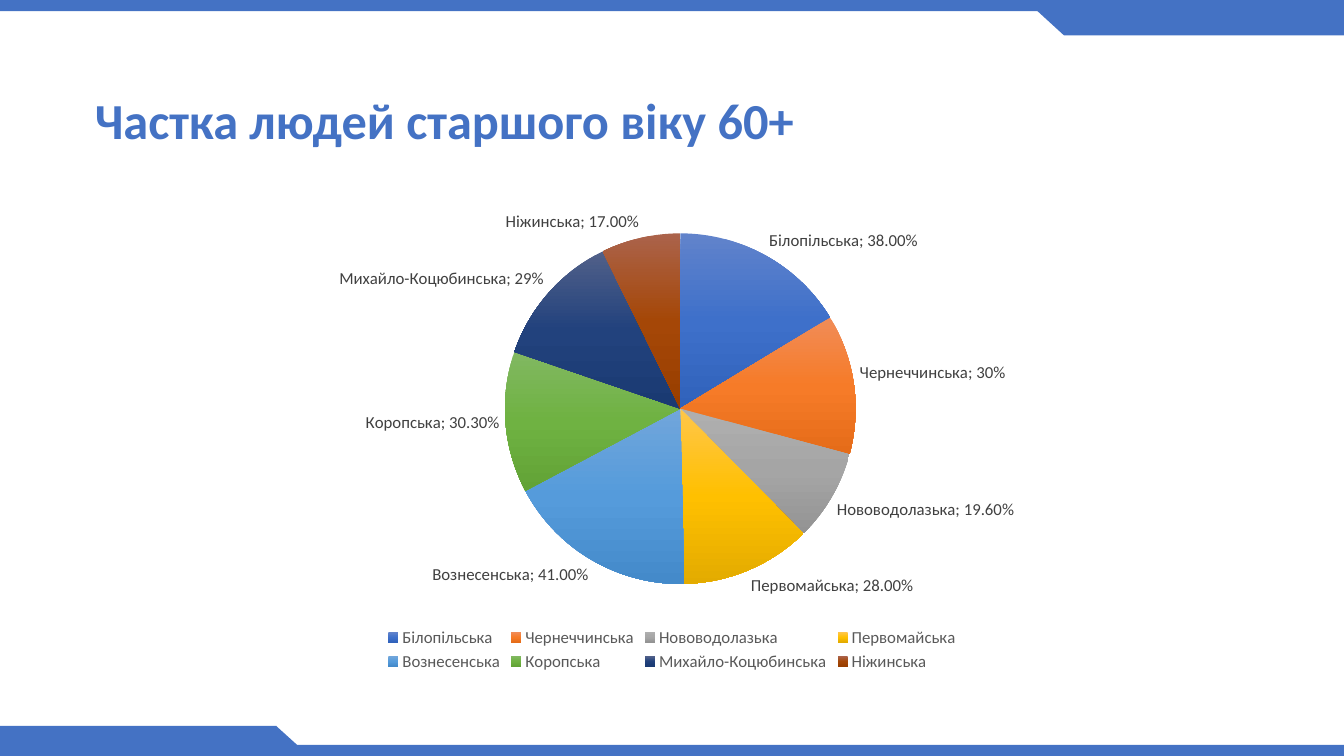
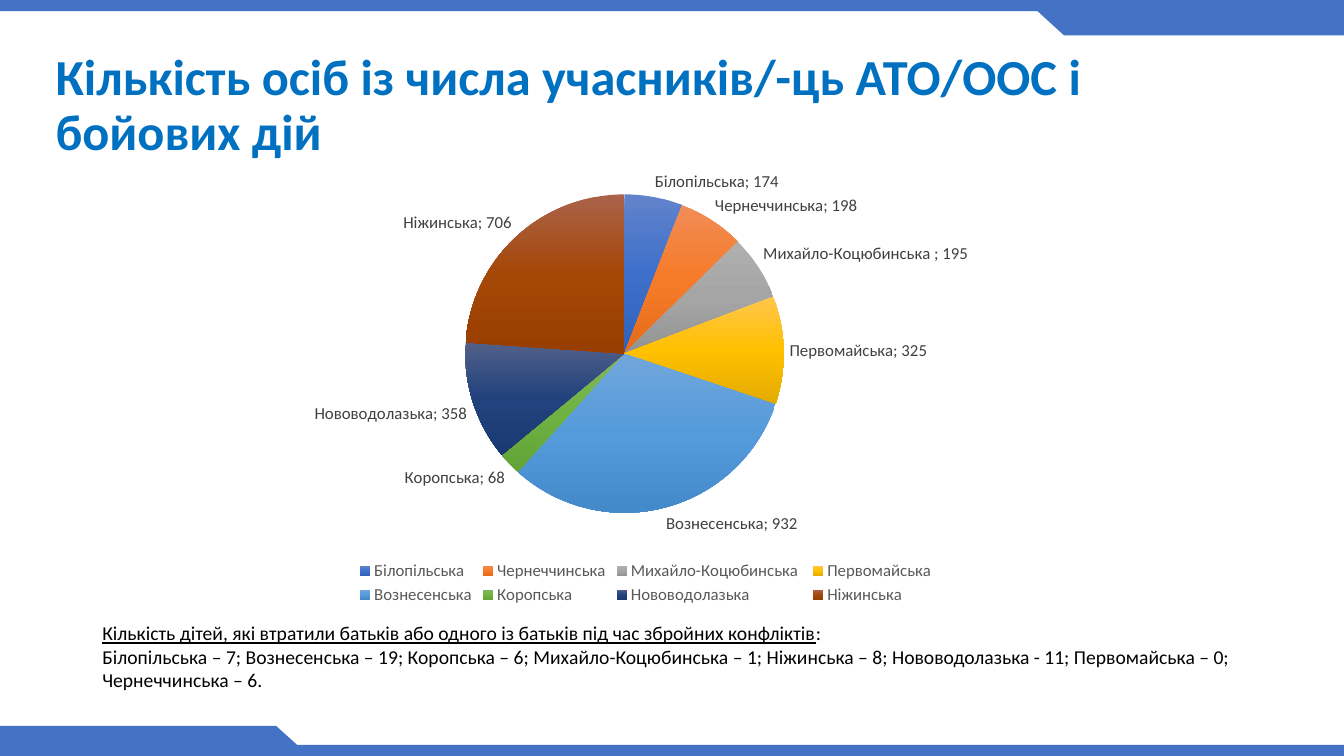
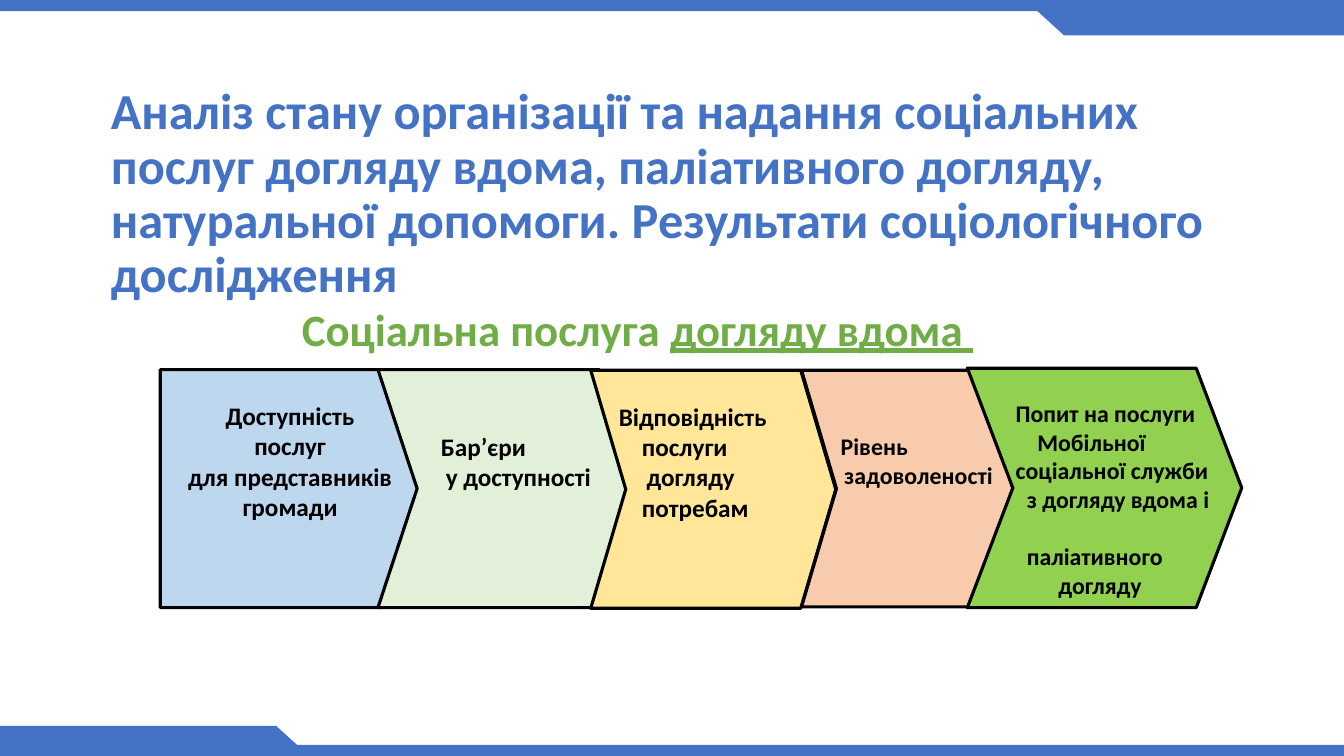
from copy import deepcopy

from pptx import Presentation
from pptx.chart.data import CategoryChartData
from pptx.dml.color import RGBColor
from pptx.enum.chart import XL_CHART_TYPE, XL_LABEL_POSITION, XL_LEGEND_POSITION
from pptx.enum.shapes import MSO_SHAPE
from pptx.enum.text import MSO_ANCHOR, MSO_AUTO_SIZE, PP_ALIGN
from pptx.oxml import parse_xml
from pptx.oxml.ns import nsdecls, qn
from pptx.util import Pt

FONT = "Calibri"
BLUE = RGBColor(0x44, 0x72, 0xC4)
DEEP_BLUE = RGBColor(0x00, 0x70, 0xC0)
GREEN = RGBColor(0x70, 0xAD, 0x47)
BLACK = RGBColor(0x00, 0x00, 0x00)
LABEL_GRAY = RGBColor(0x40, 0x40, 0x40)
LEGEND_GRAY = RGBColor(0x59, 0x59, 0x59)
STEP_BLUE = RGBColor(0xBD, 0xD7, 0xEE)
STEP_MINT = RGBColor(0xE2, 0xF0, 0xD9)
STEP_YELLOW = RGBColor(0xFF, 0xE6, 0x99)
STEP_PEACH = RGBColor(0xF8, 0xCB, 0xAD)
STEP_GREEN = RGBColor(0x92, 0xD0, 0x50)
SLICE_GRADIENTS = [
    [RGBColor.from_string(code) for code in codes.split()]
    for codes in (
        "6183CB 3E70CA 3062BB",
        "F18C57 F67B28 E56C19",
        "AFAFAF A5A5A5 939393",
        "FFC64B FFC000 E3AB00",
        "71A6DB 559BDB 448ACA",
        "81B861 6FB242 62A336",
        "516089 22427D 1A3A72",
        "AB634B A54707 983E00",
    )
]


def add_title(slide, text, color, left, top, width, height):
    title = slide.shapes.title
    title.left, title.top, title.width, title.height = Pt(left), Pt(top), Pt(width), Pt(height)
    frame = title.text_frame
    frame.auto_size = MSO_AUTO_SIZE.NONE
    frame.word_wrap = True
    frame.vertical_anchor = MSO_ANCHOR.MIDDLE
    paragraph = frame.paragraphs[0]
    paragraph.alignment = PP_ALIGN.LEFT
    paragraph.line_spacing = 0.9
    run = paragraph.add_run()
    run.text = text
    run.font.name, run.font.size, run.font.bold = FONT, Pt(36), True
    run.font.color.rgb = color


def add_pie(slide, left, top, width, height, values, number_format, fixed_labels):
    """Draw a pie of communities; fixed_labels maps a slice index to its own label text."""
    data = CategoryChartData(number_format=number_format)
    data.categories = values.keys()
    data.add_series("Series 1", values.values())
    chart = slide.shapes.add_chart(
        XL_CHART_TYPE.PIE, Pt(left), Pt(top), Pt(width), Pt(height), data
    ).chart
    chart.has_title = False
    chart.font.name, chart.font.size = FONT, Pt(10)
    chart.font.color.rgb = BLACK
    chart.has_legend = True
    chart.legend.position = XL_LEGEND_POSITION.BOTTOM
    chart.legend.include_in_layout = False
    chart.plots[0].vary_by_categories = True
    series = chart.plots[0].series[0]

    labels = series.data_labels
    labels.show_value = labels.show_category_name = True
    labels.show_percentage = labels.show_series_name = labels.show_legend_key = False
    labels.position = XL_LABEL_POSITION.OUTSIDE_END
    labels.number_format, labels.number_format_is_linked = number_format, False
    for font, color in ((chart.legend.font, LEGEND_GRAY), (labels.font, LABEL_GRAY)):
        font.name, font.size = FONT, Pt(12)
        font.color.rgb = color
    for index, text in fixed_labels.items():
        label = series.points[index].data_label
        run = label.text_frame.paragraphs[0].add_run()
        run.text = text
        run.font.name, run.font.size = FONT, Pt(12)
        run.font.color.rgb = LABEL_GRAY
        label.position = XL_LABEL_POSITION.OUTSIDE_END
    for flag in list(chart.element.iter(qn("c:showBubbleSize"))):
        flag.addnext(parse_xml(f'<c:separator {nsdecls("c")}>; </c:separator>'))

    for index, colors in enumerate(SLICE_GRADIENTS):
        fill = series.points[index].format.fill
        fill.gradient()
        fill.gradient_angle = 270
        stop_list = list(chart.element.iter(qn("a:gsLst")))[index]
        stop_list.append(deepcopy(stop_list[0]))
        for stop, color, position in zip(fill.gradient_stops, colors, (0, 0.5, 1)):
            stop.color.rgb = color
            stop.position = position


presentation = Presentation()
presentation.slide_width, presentation.slide_height = Pt(960), Pt(540)
content_layout, title_layout = presentation.slide_layouts[1], presentation.slide_layouts[5]

# Slide 1: share of older people
slide = presentation.slides.add_slide(title_layout)

# Bands are drawn once and moved to the master, behind its placeholders
master_tree = presentation.slide_master.element.cSld.spTree
bands = [
    (MSO_SHAPE.RECTANGLE, 0, 0, 960, 8, 0),
    (MSO_SHAPE.RECTANGLE, 0, 532, 960, 8, 0),
    (MSO_SHAPE.RECTANGLE, 760, 3.5, 200, 21.75, 0),
    (MSO_SHAPE.FLOWCHART_MERGE, 736, 3.25, 47.5, 21.75, 0),
    (MSO_SHAPE.RECTANGLE, 0, 518.5, 197.5, 21.5, 0),
    (MSO_SHAPE.FLOWCHART_MERGE, 173.5, 518.5, 47.5, 21.5, 180),
]
for index, (kind, left, top, width, height, rotation) in enumerate(bands):
    band = slide.shapes.add_shape(kind, Pt(left), Pt(top), Pt(width), Pt(height))
    band.rotation = rotation
    band.shadow.inherit = False
    band.fill.solid()
    band.fill.fore_color.rgb = BLUE
    band.line.fill.background()
    band.element.nvSpPr.cNvPr.set("id", str(20 + index))
    master_tree.insert(2 + index, band.element)

add_title(slide, "Частка людей старшого віку 60+", BLUE, 60.5, 30, 828, 116)
older_share = {
    "Білопільська": 0.38,
    "Чернеччинська": 0.3,
    "Нововодолазька": 0.196,
    "Первомайська": 0.28,
    "Вознесенська": 0.41,
    "Коропська": 0.303,
    "Михайло-Коцюбинська": 0.29,
    "Ніжинська": 0.17,
}
add_pie(slide, 66, 140, 828, 342.5, older_share, "0.00%",
        {1: "Чернеччинська; 30%", 6: "Михайло-Коцюбинська; 29%"})

# Slide 2: veterans
slide = presentation.slides.add_slide(title_layout)
add_title(slide, "Кількість осіб із числа учасників/-ць АТО/ООС і бойових дій",
          DEEP_BLUE, 32.5, 29.5, 867.5, 93.5)
veterans = {
    "Білопільська": 174,
    "Чернеччинська": 198,
    "Михайло-Коцюбинська ": 195,
    "Первомайська": 325,
    "Вознесенська": 932,
    "Коропська": 68,
    "Нововодолазька": 358,
    "Ніжинська": 706,
}
add_pie(slide, 66, 111.5, 790.5, 323.5, veterans, "General", {})

note_frame = slide.shapes.add_textbox(Pt(66), Pt(440), Pt(867.5), Pt(58)).text_frame
note_frame.word_wrap = True
note_lines = [
    [("Кількість дітей, які втратили батьків або одного із батьків "
      "під час збройних конфліктів", True), (":", False)],
    [("Білопільська – 7; Вознесенська – 19; Коропська – 6; Михайло-Коцюбинська – 1; "
      "Ніжинська – 8; Нововодолазька - 11; Первомайська – 0; Чернеччинська – 6.", False)],
]
for index, line in enumerate(note_lines):
    paragraph = note_frame.add_paragraph() if index else note_frame.paragraphs[0]
    for text, underlined in line:
        run = paragraph.add_run()
        run.text = text
        run.font.name, run.font.size, run.font.underline = FONT, Pt(14), underlined
        run.font.color.rgb = BLACK

# Slide 3: survey topics
slide = presentation.slides.add_slide(content_layout)
add_title(slide, "Аналіз стану організації та надання соціальних послуг догляду вдома, "
          "паліативного догляду, натуральної допомоги. Результати соціологічного дослідження",
          BLUE, 72, 77, 828, 124.5)

body = slide.placeholders[1]
body.left, body.top, body.width, body.height = Pt(208.5), Pt(216), Pt(620), Pt(44)
body.text_frame.auto_size = MSO_AUTO_SIZE.NONE
paragraph = body.text_frame.paragraphs[0]
properties = paragraph._p.get_or_add_pPr()
properties.set("marL", "0")
properties.set("indent", "0")
properties.append(parse_xml(f'<a:buNone {nsdecls("a")}/>'))
paragraph.line_spacing = 0.9
paragraph.space_before = Pt(0)
for text, underlined in (("Соціальна послуга ", False), ("догляду вдома ", True)):
    run = paragraph.add_run()
    run.text = text
    run.font.name, run.font.size = FONT, Pt(32)
    run.font.bold, run.font.underline = True, underlined
    run.font.color.rgb = GREEN

# Each step: left, top, width, height, tip, notch, fill, text top, size, alignment,
# lines as (indent, space before, text)
steps = [
    (114.5, 264, 185.5, 170, 28, 0, STEP_BLUE, 22, 18, PP_ALIGN.CENTER,
     [(0, 0, "Доступність"), (0, 0, "послуг"), (0, 0, "для представників громади")]),
    (270, 264, 186, 170, 28, 28, STEP_MINT, 44, 18, PP_ALIGN.LEFT,
     [(45, 0, "Бар’єри"), (48.5, 0, "у доступності")]),
    (422, 264.5, 175, 170, 25, 25, STEP_YELLOW, 22, 18, PP_ALIGN.LEFT,
     [(20, 0, "Відповідність"), (36.5, 0, "послуги"), (40, 0, "догляду"),
      (36.5, 0, "потребам")]),
    (572.5, 264.5, 151, 169, 25, 25, STEP_PEACH, 44, 17, PP_ALIGN.LEFT,
     [(28, 0, "Рівень"), (30.5, 0, "задоволеності")]),
    (691, 263, 196, 171, 32.5, 32.5, STEP_GREEN, 22, 17, PP_ALIGN.LEFT,
     [(34.5, 0, "Попит на послуги"), (50, 0, "Мобільної"), (34.5, 0, "соціальної служби"),
      (42.5, 0, "з догляду вдома і"), (42.5, 20.5, "паліативного"), (65, 0, "догляду")]),
]
for left, top, width, height, tip, notch, fill, text_top, size, alignment, lines in steps:
    right, middle, bottom = left + width, top + height / 2, top + height
    outline = [(right - tip, top), (right, middle), (right - tip, bottom),
               (left, bottom), (left + notch, middle)]
    builder = slide.shapes.build_freeform(Pt(left), Pt(top))
    builder.add_line_segments([(Pt(x), Pt(y)) for x, y in outline], close=True)
    step = builder.convert_to_shape()
    step.shadow.inherit = False
    step.fill.solid()
    step.fill.fore_color.rgb = fill
    step.line.color.rgb = BLACK
    step.line.width = Pt(2.25)
    frame = step.text_frame
    frame.word_wrap = True
    frame.vertical_anchor = MSO_ANCHOR.TOP
    frame.margin_left = frame.margin_right = frame.margin_bottom = 0
    frame.margin_top = Pt(text_top)
    for index, (indent, space_before, text) in enumerate(lines):
        paragraph = frame.add_paragraph() if index else frame.paragraphs[0]
        paragraph._p.get_or_add_pPr().set("marL", str(Pt(indent)))
        paragraph.alignment = alignment
        paragraph.space_before = Pt(space_before)
        run = paragraph.add_run()
        run.text = text
        run.font.name, run.font.size, run.font.bold = FONT, Pt(size), True
        run.font.color.rgb = BLACK

presentation.save("out.pptx")
